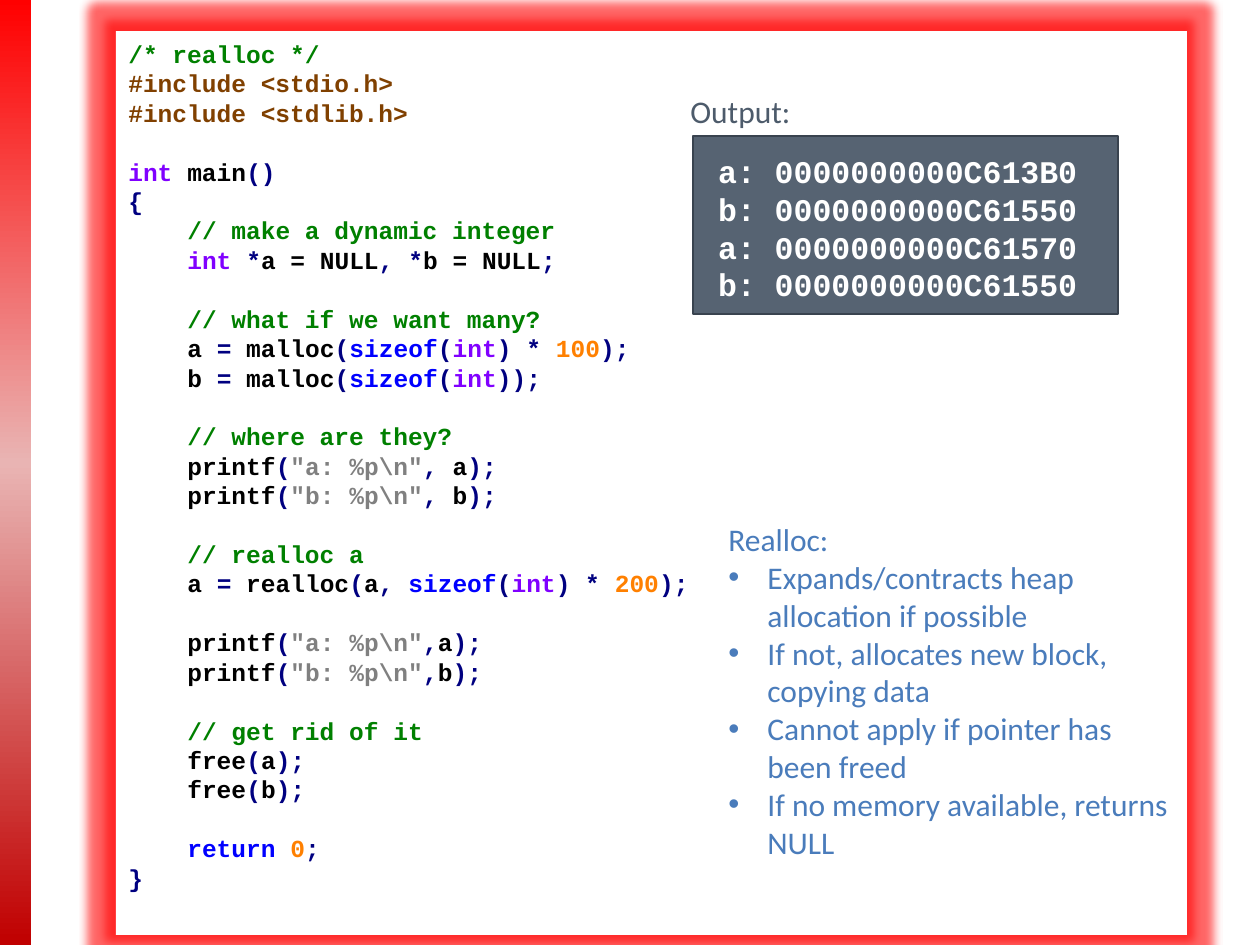
"""Build a slide explaining realloc with a code listing, its output and notes."""
from lxml.etree import SubElement
from pptx import Presentation
from pptx.dml.color import RGBColor
from pptx.enum.shapes import MSO_SHAPE as Shape
from pptx.enum.text import MSO_ANCHOR as Anchor, PP_ALIGN as Align
from pptx.oxml import parse_xml
from pptx.oxml.ns import nsdecls, qn
from pptx.util import Pt

PX = 914400 / 126
MONO, SANS = "Courier New", "Calibri"
INK = {"C": "008000", "P": "804000", "T": "8000FF", "B": "000000",
       "O": "000080", "K": "0000FF", "N": "FF8000", "S": "808080"}
SLATE, NOTE_BLUE = "4D5B6B", "4A7CBB"


def px(value):
    return round(value * PX)


def add_line(frame, spans, size, font, bold=False):
    first = frame.paragraphs[0]
    para = frame.add_paragraph() if first.runs else first
    para.alignment = Align.LEFT
    para.line_spacing = Pt(size * 1.2)
    for text, colour in spans:
        span = para.add_run()
        span.text = text
        span.font.size, span.font.name, span.font.bold = Pt(size), font, bold
        span.font.color.rgb = RGBColor.from_string(colour)
    return para


deck = Presentation()
deck.slide_width, deck.slide_height = px(1260), px(945)
page = deck.slides.add_slide(deck.slide_layouts[6])

panels = []
for left, top, width, height in [(0, 0, 31, 945), (116, 31, 1071, 904), (693, 136, 425, 178)]:
    panel = page.shapes.add_shape(Shape.RECTANGLE, px(left), px(top), px(width), px(height))
    panel.shadow.inherit = False
    panel.line.fill.background()
    panel.fill.solid()
    panel.text_frame.vertical_anchor = Anchor.TOP
    panels.append(panel)
sidebar, code_box, output_box = panels

stops = "".join(f'<a:gs pos="{at}000"><a:srgbClr val="{colour}"/></a:gs>'
                for at, colour in [(0, "FF0000"), (49, "E9B4B3"), (100, "C00000")])
gradient = parse_xml(f'<a:gradFill {nsdecls("a")}><a:gsLst>{stops}</a:gsLst>'
                     '<a:lin ang="5400000" scaled="0"/></a:gradFill>')
solid = sidebar._element.spPr.find(qn("a:solidFill"))
solid.getparent().replace(solid, gradient)

code_box.fill.fore_color.rgb = RGBColor.from_string("FFFFFF")
effects = code_box._element.spPr.find(qn("a:effectLst"))
glow = SubElement(effects, qn("a:glow"), rad=str(px(18)))
glow_colour = SubElement(glow, qn("a:srgbClr"), val="FF0000")
SubElement(glow_colour, qn("a:alpha"), val="60000")

code = [
    "C/* realloc */",
    "P#include <stdio.h>",
    "P#include <stdlib.h>",
    "",
    "Tint|B main|O()",
    "O{",
    ">C// make a dynamic integer",
    ">Tint|B |O*|Ba = NULL|O,|B |O*|Bb = NULL|O;",
    "",
    ">C// what if we want many?",
    ">Ba |O=|B malloc|O(|Ksizeof|O(|Tint|O) * |N100|O);",
    ">Bb |O=|B malloc|O(|Ksizeof|O(|Tint|O));",
    "",
    ">C// where are they?",
    *[f'>Bprintf|O(|S"{name}: %p\\n"|O, |B{name}|O);' for name in "ab"],
    "",
    ">C// realloc a",
    ">Ba |O=|B realloc|O(|Ba|O, |Ksizeof|O(|Tint|O) * |N200|O);",
    "",
    *[f'>Bprintf|O(|S"{name}: %p\\n"|O,|B{name}|O);' for name in "ab"],
    "",
    ">C// get rid of it",
    *[f">Bfree|O(|B{name}|O);" for name in "ab"],
    "",
    ">Kreturn|B |N0|O;",
    "O}",
]
frame = code_box.text_frame
frame.word_wrap = True
frame.margin_top = px(8)
gap = 0
for line in code:
    if not line:
        gap = 16.8
        continue
    parts = line.lstrip(">").split("|")
    para = add_line(frame, [(part[1:], INK[part[0]]) for part in parts], 14, MONO, True)
    para.space_before = Pt(gap)
    if line.startswith(">"):
        para._p.get_or_add_pPr().set("marL", str(px(59)))
    gap = 0

output_box.fill.fore_color.rgb = RGBColor.from_string(SLATE)
output_fill = output_box._element.spPr.find(qn("a:solidFill"))
SubElement(output_fill[0], qn("a:alpha"), val="95000")
output_box.line.color.rgb = RGBColor.from_string("39434F")
output_box.line.width = Pt(1.25)
frame = output_box.text_frame
frame.word_wrap = False
frame.margin_left, frame.margin_right = px(25), px(38)
frame.margin_top, frame.margin_bottom = px(16), px(8)
for text in ["a: 0000000000C613B0", "b: 0000000000C61550",
             "a: 0000000000C61570", "b: 0000000000C61550"]:
    add_line(frame, [(text, "FFFFFF")], 18, MONO, True)

caption = page.shapes.add_textbox(px(678), px(86), px(126), px(50))
caption.text_frame.word_wrap = False
add_line(caption.text_frame, [("Output:", SLATE)], 18, SANS)

notes = page.shapes.add_textbox(px(716), px(514), px(472), px(357))
notes.text_frame.word_wrap = True
add_line(notes.text_frame, [("Realloc:", NOTE_BLUE)], 18, SANS)
for text in ["Expands/contracts heap allocation if possible",
             "If not, allocates new block, copying data",
             "Cannot apply if pointer has been freed",
             "If no memory available, returns NULL"]:
    para = add_line(notes.text_frame, [(text, NOTE_BLUE)], 18, SANS)
    settings = para._p.get_or_add_pPr()
    settings.set("marL", str(px(39)))
    settings.set("indent", str(px(-39)))
    SubElement(settings, qn("a:buFont"), typeface="Arial")
    SubElement(settings, qn("a:buChar"), char="•")

deck.save("out.pptx")
